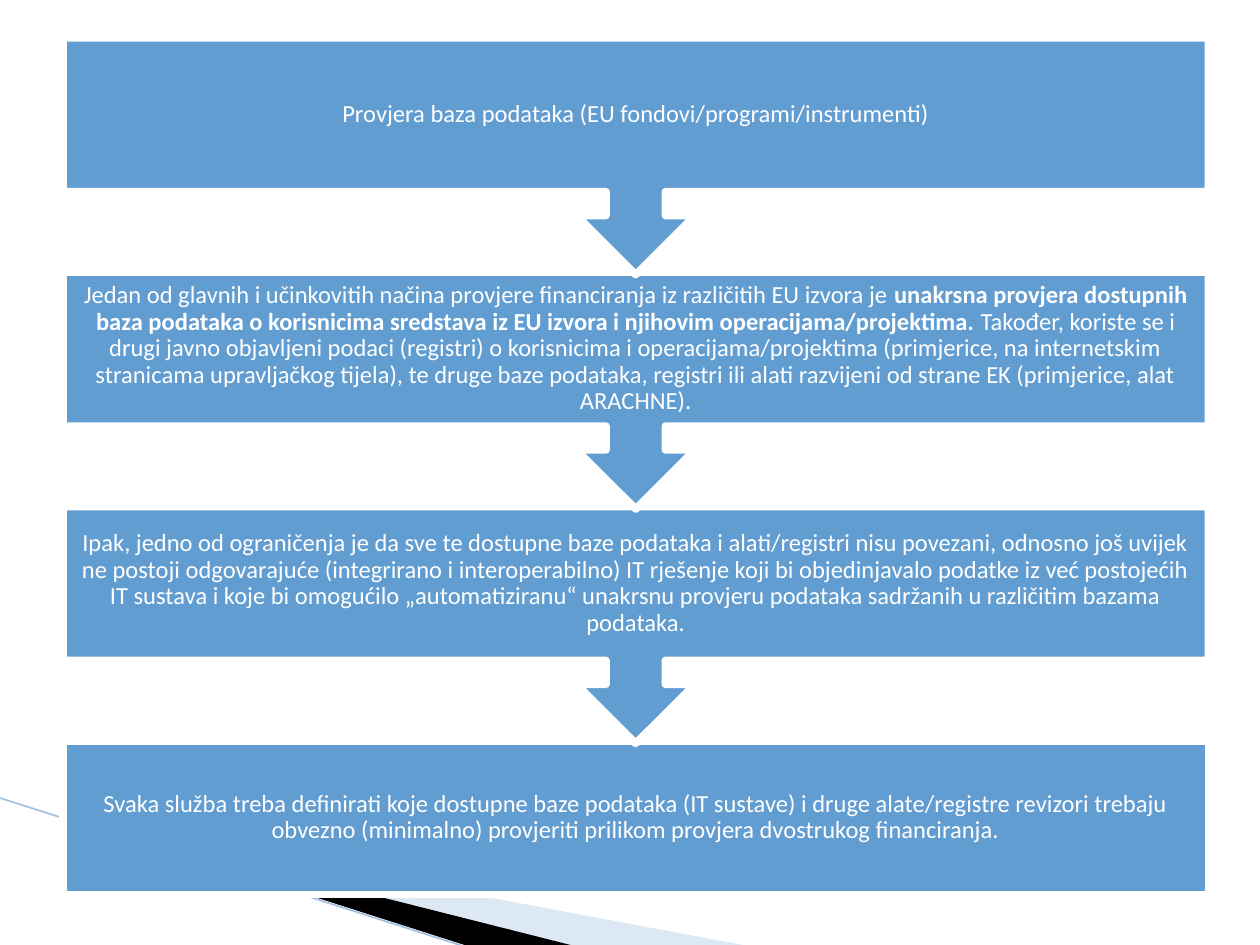
import pptx
import pptx.util
import pptx.dml.color
import pptx.enum.shapes
import pptx.enum.text
import pptx.oxml
import pptx.oxml.ns

Inches = pptx.util.Inches
Pt = pptx.util.Pt
KIND = pptx.enum.shapes.MSO_SHAPE
COLORS = {"box": "629DD1", "white": "FFFFFF", "pale": "ABC6E6",
          "black": "000000", "rule": "A4C1E3"}

# Each step is a list of (text, bold) runs
STEPS = [
    [("Provjera baza podataka (EU fondovi/programi/instrumenti)", False)],
    [("Jedan od glavnih i učinkovitih načina provjere financiranja iz "
      "različitih EU izvora je ", False),
     ("unakrsna provjera dostupnih baza podataka o korisnicima sredstava iz "
      "EU izvora i njihovim operacijama/projektima. ", True),
     ("Također, koriste se i drugi javno objavljeni podaci (registri) o "
      "korisnicima i operacijama/projektima (primjerice, na internetskim "
      "stranicama upravljačkog tijela), te druge baze podataka, registri ili "
      "alati razvijeni od strane EK (primjerice, alat ARACHNE).", False)],
    [("Ipak, jedno od ograničenja je da sve te dostupne baze podataka i "
      "alati/registri nisu povezani, odnosno još uvijek ne postoji "
      "odgovarajuće (integrirano i interoperabilno) IT rješenje koji bi "
      "objedinjavalo podatke iz već postojećih IT sustava i koje bi omogućilo "
      "„automatiziranu“ unakrsnu provjeru podataka sadržanih u različitim "
      "bazama podataka.", False)],
    [("Svaka služba treba definirati koje dostupne baze podataka (IT sustave) "
      "i druge alate/registre revizori trebaju obvezno (minimalno) provjeriti "
      "prilikom provjera dvostrukog financiranja.", False)],
]


def rgb(name):
    return pptx.dml.color.RGBColor.from_string(COLORS[name])


def apply(target, values):
    for key, value in values.items():
        setattr(target, key, value)


class Page:
    font = {"name": "Calibri", "size": Pt(14)}
    para = {"alignment": pptx.enum.text.PP_ALIGN.CENTER,
            "line_spacing": 0.9, "space_after": Pt(4.9)}
    frame = {"word_wrap": True,
             "vertical_anchor": pptx.enum.text.MSO_ANCHOR.MIDDLE,
             **{f"margin_{side}": Inches(0.11)
                for side in ("left", "right", "top", "bottom")}}

    def __init__(self, slide):
        self.slide = slide
        self.shapes = slide.shapes

    def wedge(self, points, color, alpha=None):
        spots = [(Inches(x), Inches(y)) for x, y in points]
        build = self.shapes.build_freeform(*spots[0], scale=1.0)
        build.add_line_segments(spots[1:], close=True)
        shape = build.convert_to_shape()
        shape.shadow.inherit = False
        shape.fill.solid()
        shape.fill.fore_color.rgb = rgb(color)
        shape.line.fill.background()
        if alpha:
            tint = shape.fill._xPr.find(".//" + pptx.oxml.ns.qn("a:srgbClr"))
            tag = pptx.oxml.ns.qn("a:alpha")
            tint.append(tint.makeelement(tag, {"val": str(alpha * 1000)}))

    def rule(self, start, end):
        ends = [Inches(n) for n in (*start, *end)]
        line = self.shapes.add_connector(
            pptx.enum.shapes.MSO_CONNECTOR.STRAIGHT, *ends)
        line.line.color.rgb = rgb("rule")
        line.line.width = Pt(0.95)
        props = line._element.spPr
        props.append(props.makeelement(pptx.oxml.ns.qn("a:effectLst"), {}))

    def block(self, kind, area, turn=0):
        shape = self.shapes.add_shape(kind, *map(Inches, area))
        shape.rotation = turn
        shape.shadow.inherit = False
        shape.fill.solid()
        shape.fill.fore_color.rgb = rgb("box")
        shape.line.color.rgb = rgb("white")
        shape.line.width = Pt(4.33)

    def text(self, runs, area):
        frame = self.shapes.add_textbox(*map(Inches, area)).text_frame
        apply(frame, self.frame)
        para = frame.paragraphs[0]
        apply(para, self.para)
        for words, bold in runs:
            run = para.add_run()
            run.text = words
            apply(run.font, {**self.font, "bold": bold})
            run.font.color.rgb = rgb("white")


def main():
    deck = pptx.Presentation()
    deck.slide_width, deck.slide_height = Inches(10), Inches(7.5)
    page = Page(deck.slides.add_slide(deck.slide_layouts[6]))

    # Corner decoration
    page.wedge([(0.55, 6.5), (5.95, 7.51), (4.56, 7.51)], "pale", 40)
    page.wedge([(0.53, 6.49), (4.57, 7.51), (3.72, 7.51)], "black")
    page.rule((-0.01, 6.33), (3.71, 7.52))

    # Steps, last one at the back so that each arrow lies over the next box
    left, top, wide, high, long, pitch = 0.5, 0.3, 9.09, 1.22, 1.88, 1.86
    last = len(STEPS) - 1
    for i in range(last, -1, -1):
        y = top + i * pitch
        if i == last:
            page.block(KIND.RECTANGLE, (left, y, wide, high))
        else:
            page.block(KIND.UP_ARROW_CALLOUT, (left, y, wide, long), 180)
        page.text(STEPS[i], (left, y, wide, high))

    deck.save("out.pptx")


if __name__ == "__main__":
    main()
